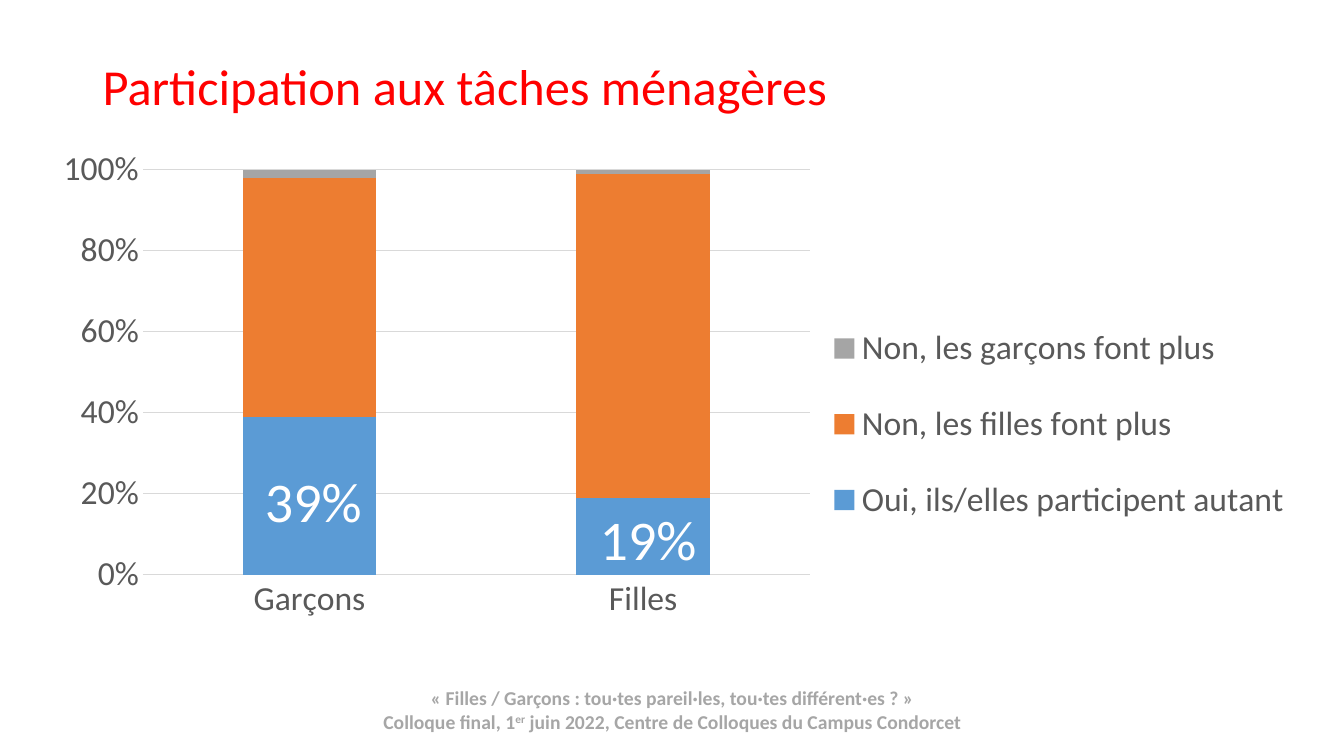
from dataclasses import dataclass

from lxml import etree
from pptx import Presentation, util as u
from pptx.chart import data as chart_data
from pptx.dml import color
from pptx.enum import chart as ce, text
from pptx.oxml import ns


@dataclass(frozen=True)
class Theme:
    font: str = "Calibri"
    title: str = "FF0000"
    label: str = "FFFFFF"
    footer: str = "A6A6A6"
    axis: str = "595959"
    grid: str = "D9D9D9"
    title_size: int = 36
    label_size: int = 40
    chart_size: int = 24
    footer_size: int = 14


@dataclass(frozen=True)
class Answer:
    name: str
    values: tuple[int, int]
    fill: str


@dataclass(frozen=True)
class TextBlock:
    lines: tuple[str, ...]
    area: tuple[float, float, float, float]
    size: int
    fill: str
    bold: bool = False
    centred: bool = False
    wrap: bool = True
    middle: bool = False
    spacing: float = 1.0


THEME = Theme()
GROUPS = ("Garçons", "Filles")
ANSWERS = (
    Answer("Oui, ils/elles participent autant", (39, 19), "5B9BD5"),
    Answer("Non, les filles font plus", (59, 80), "ED7D31"),
    Answer("Non, les garçons font plus", (2, 1), "A5A5A5"),
)
FOOTER = TextBlock(
    ("«\u00a0Filles / Garçons : tou·tes pareil·les, tou·tes différent·es ?\u00a0»",
     "Colloque final, 1^er^ juin 2022, Centre de Colloques du Campus Condorcet"),
    (0.92, 6.76, 11.5, 0.57), THEME.footer_size, THEME.footer, bold=True, centred=True)
TITLE = TextBlock(
    ("Participation aux tâches ménagères",), (0.92, 0.54, 11.5, 0.69),
    THEME.title_size, THEME.title, middle=True, spacing=0.9)
SHARES = tuple(
    TextBlock((f"{value}%",), (left, top, 1.17, 0.77),
              THEME.label_size, THEME.label, wrap=False)
    for value, left, top in zip(ANSWERS[0].values, (2.53, 5.85), (4.58, 4.96)))


def style_font(font, size: int, fill: str, bold: bool = False) -> None:
    font.name = THEME.font
    font.size = u.Pt(size)
    font.bold = bold
    font.color.rgb = color.RGBColor.from_string(fill)


def draw_text(page, block: TextBlock) -> None:
    box = page.shapes.add_textbox(*map(u.Inches, block.area))
    frame = box.text_frame
    frame.text = "\n".join(line.replace("^", "") for line in block.lines)
    frame.word_wrap = block.wrap
    if block.middle:
        frame.vertical_anchor = text.MSO_ANCHOR.MIDDLE
    for para, line in zip(frame.paragraphs, block.lines):
        para.line_spacing = block.spacing
        if block.centred:
            para.alignment = text.PP_ALIGN.CENTER
        # Carets enclose superscript text
        pieces = line.split("^")
        para.runs[0].text = pieces[0]
        for index, piece in enumerate(pieces):
            span = para.add_run() if index else para.runs[0]
            span.text = piece
            style_font(span.font, block.size, block.fill, block.bold)
            if index % 2:
                span._r.get_or_add_rPr().set("baseline", "30000")


def place_part(part, index: int, area: tuple[float, ...], inner: bool = False) -> None:
    """Give a chart part a fixed place, in fractions of the chart."""
    for old in part.findall(ns.qn("c:layout")):
        part.remove(old)
    layout = etree.Element(ns.qn("c:layout"))
    manual = etree.SubElement(layout, ns.qn("c:manualLayout"))
    settings = [("layoutTarget", "inner")] if inner else []
    settings += [("xMode", "edge"), ("yMode", "edge")]
    settings += zip("xywh", map(str, area))
    for tag, value in settings:
        etree.SubElement(manual, ns.qn(f"c:{tag}")).set("val", value)
    part.insert(index, layout)


def draw_chart(page) -> None:
    table = chart_data.CategoryChartData(number_format="0")
    table.categories = GROUPS
    for answer in ANSWERS:
        table.add_series(answer.name, answer.values)
    area = map(u.Inches, (0.2, 1.41, 12.8, 5))
    chart = page.shapes.add_chart(
        ce.XL_CHART_TYPE.COLUMN_STACKED_100, *area, table).chart
    chart.has_title = False
    style_font(chart.font, THEME.chart_size, THEME.axis)
    grid = color.RGBColor.from_string(THEME.grid)

    # Stacked columns
    plot = chart.plots[0]
    plot.gap_width = 150
    plot.overlap = 100
    plot.vary_by_categories = False
    for series, answer in zip(plot.series, ANSWERS):
        series.format.fill.solid()
        series.format.fill.fore_color.rgb = color.RGBColor.from_string(answer.fill)

    # Axes and gridlines
    groups, shares = chart.category_axis, chart.value_axis
    for axis in (groups, shares):
        axis.major_tick_mark = axis.minor_tick_mark = ce.XL_TICK_MARK.NONE
        style_font(axis.tick_labels.font, THEME.chart_size, THEME.axis)
    shares.has_major_gridlines = True
    shares.minimum_scale, shares.maximum_scale, shares.major_unit = 0, 1, 0.2
    shares.tick_labels.number_format = "0%"
    shares.tick_labels.number_format_is_linked = False
    shares.format.line.fill.background()
    for line in (groups.format.line, shares.major_gridlines.format.line):
        line.color.rgb = grid
        line.width = u.Pt(0.75)

    # Legend and placement
    chart.has_legend = True
    legend = chart.legend
    legend.position = ce.XL_LEGEND_POSITION.RIGHT
    legend.include_in_layout = False
    style_font(legend.font, THEME.chart_size, THEME.axis)
    place_part(legend._element, 1, (0.62, 0.3, 0.37, 0.52))
    plot_area = chart._chartSpace.chart.plotArea
    place_part(plot_area, 0, (0.095, 0.055, 0.517, 0.804), inner=True)


def main() -> None:
    deck = Presentation()
    deck.slide_width, deck.slide_height = u.Inches(13.33), u.Inches(7.5)
    page = deck.slides.add_slide(deck.slide_layouts[6])
    draw_text(page, FOOTER)
    draw_text(page, TITLE)
    draw_chart(page)
    for share in SHARES:
        draw_text(page, share)
    deck.save("out.pptx")


if __name__ == "__main__":
    main()
